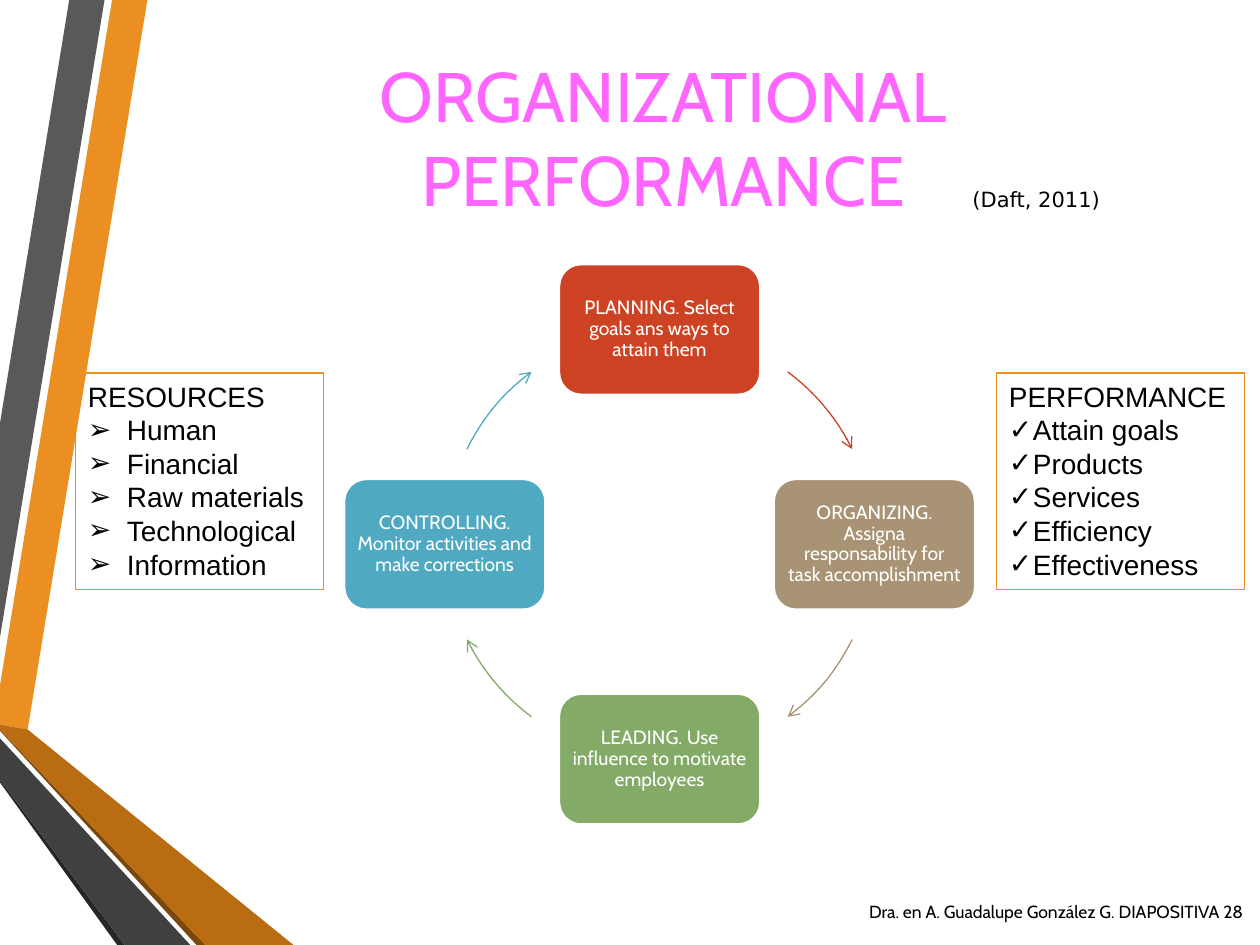
from dataclasses import dataclass
from math import cos, radians, sin

from lxml.etree import SubElement
from pptx import Presentation
from pptx.dml.color import RGBColor
from pptx.enum.shapes import MSO_SHAPE
from pptx.enum.text import MSO_ANCHOR, MSO_AUTO_SIZE, PP_ALIGN
from pptx.oxml.ns import qn
from pptx.util import Emu, Inches, Pt


@dataclass(frozen=True)
class Theme:
    face: str = "Cabin"
    list_face: str = "Arial"
    cite_face: str = "DejaVu Sans"
    ink: str = "000000"
    white: str = "FFFFFF"
    pink: str = "FF66FF"
    edge: str = "EB8F22"
    title: int = 40
    list: int = 16
    cite: int = 12
    step: int = 11
    foot: int = 10


@dataclass(frozen=True)
class Box:
    """Left, top, width and height in grid columns and rows."""
    x: float
    y: float
    w: float
    h: float


@dataclass(frozen=True)
class Band:
    color: str
    points: tuple


@dataclass(frozen=True)
class Step:
    text: str
    color: str


@dataclass(frozen=True)
class Panel:
    box: Box
    head: str
    items: tuple
    mark: str
    indent: float


THEME = Theme()
COLS, ROWS = 100, 75
WIDTH, HEIGHT = Inches(10), Inches(7.5)

# Side ribbon, from back to front
BANDS = (
    Band("EB8F22", ((0, 54.4), (0, 57.5), (2.2, 57.9), (11.7, 0), (8.9, 0))),
    Band("595959", ((8.3, 0), (5.5, 0), (0, 33.6), (0, 50.6))),
    Band("262626", ((0, 61.9), (0, 62.1), (9.3, 75), (9.9, 75))),
    Band("7B480B", ((0, 57.9), (0, 58), (15.6, 75), (16.3, 75))),
    Band("B96C11", ((0, 57.9), (16.3, 75), (23.3, 75), (2.2, 57.9), (0, 57.5))),
    Band("404040", ((0, 61.9), (9.9, 75), (15.1, 75), (0, 58.6))),
)

# Cycle, clockwise from the top
STEPS = (
    Step("PLANNING. Select goals ans ways to attain them", "CD4223"),
    Step("ORGANIZING. Assigna responsability for task accomplishment", "A89374"),
    Step("LEADING. Use influence to motivate employees", "83AA67"),
    Step("CONTROLLING. Monitor activities and make corrections", "4FA9C1"),
)
MID_X, MID_Y, RADIUS = 52.35, 43.2, 17.05
STEP_W, STEP_H = 15.9, 10.3
ARCS = ((306.6, 333.7), (26.3, 53.4), (126.6, 153.7), (206.3, 233.4))

PANELS = (
    Panel(Box(79.1, 29.6, 19.7, 17.2), "PERFORMANCE",
          ("Attain goals", "Products", "Services", "Efficiency",
           "Effectiveness"), "✓", 0.19),
    Panel(Box(6, 29.6, 19.7, 17.2), "RESOURCES",
          ("Human", "Financial", "Raw materials", "Technological",
           "Information"), "➢", 0.31),
)


def col(n: float) -> Emu:
    return Emu(round(WIDTH * n / COLS))


def row(n: float) -> Emu:
    return Emu(round(HEIGHT * n / ROWS))


def place(box: Box) -> tuple:
    return col(box.x), row(box.y), col(box.w), row(box.h)


def rgb(color: str) -> RGBColor:
    return RGBColor.from_string(color)


def paint(shape, fill: str | None, line: str | None, width: float = 0.75) -> None:
    shape.shadow.inherit = False
    if fill:
        shape.fill.solid()
        shape.fill.fore_color.rgb = rgb(fill)
    else:
        shape.fill.background()
    if line:
        shape.line.color.rgb = rgb(line)
        shape.line.width = Pt(width)
    else:
        shape.line.fill.background()


def style(frame, face: str, size: int, color: str, align=PP_ALIGN.LEFT) -> None:
    for par in frame.paragraphs:
        par.alignment = align
        for run in par.runs:
            run.font.name = face
            run.font.size = Pt(size)
            run.font.color.rgb = rgb(color)


def label(slide, box: Box, text: str, face: str, size: int, color: str,
          align=PP_ALIGN.LEFT, anchor=MSO_ANCHOR.MIDDLE, wrap: bool = True) -> None:
    frame = slide.shapes.add_textbox(*place(box)).text_frame
    frame.word_wrap = wrap
    frame.vertical_anchor = anchor
    frame.text = text
    style(frame, face, size, color, align)


def draw_band(slide, band: Band) -> None:
    first, *rest = [(col(x), row(y)) for x, y in band.points]
    pen = slide.shapes.build_freeform(*first)
    pen.add_line_segments(rest, close=True)
    paint(pen.convert_to_shape(), band.color, None)


def draw_step(slide, step: Step, angle: float) -> None:
    x = MID_X + RADIUS * cos(radians(angle)) - STEP_W / 2
    y = MID_Y + RADIUS * sin(radians(angle)) - STEP_H / 2
    shape = slide.shapes.add_shape(MSO_SHAPE.ROUNDED_RECTANGLE,
                                   *place(Box(x, y, STEP_W, STEP_H)))
    paint(shape, step.color, THEME.white, 0.85)
    frame = shape.text_frame
    frame.word_wrap = True
    frame.vertical_anchor = MSO_ANCHOR.MIDDLE
    frame.margin_left = frame.margin_right = Inches(0.05)
    frame.margin_top = frame.margin_bottom = Inches(0.05)
    frame.text = step.text
    frame.paragraphs[0].line_spacing = 0.9
    style(frame, THEME.face, THEME.step, THEME.white, PP_ALIGN.CENTER)


def draw_arc(slide, color: str, span: tuple) -> None:
    ring = Box(MID_X - RADIUS, MID_Y - RADIUS, 2 * RADIUS, 2 * RADIUS)
    arc = slide.shapes.add_shape(MSO_SHAPE.ARC, *place(ring))
    for i, angle in enumerate(span):
        arc.adjustments[i] = angle * 0.6  # 60000ths of a degree / 100000
    paint(arc, None, color)
    SubElement(arc.line._get_or_add_ln(), qn("a:tailEnd"), type="arrow")


def draw_panel(slide, panel: Panel) -> None:
    shape = slide.shapes.add_shape(MSO_SHAPE.RECTANGLE, *place(panel.box))
    paint(shape, None, THEME.edge)
    frame = shape.text_frame
    frame.word_wrap = True
    frame.auto_size = MSO_AUTO_SIZE.SHAPE_TO_FIT_TEXT
    frame.vertical_anchor = MSO_ANCHOR.TOP
    frame.text = "\n".join((panel.head, *panel.items))
    style(frame, THEME.list_face, THEME.list, THEME.ink)
    for par in frame.paragraphs[1:]:
        props = par._p.get_or_add_pPr()
        props.set("marL", str(Inches(panel.indent)))
        props.set("indent", str(-Inches(panel.indent)))
        SubElement(props, qn("a:buFont"), typeface=THEME.list_face)
        SubElement(props, qn("a:buChar"), char=panel.mark)


def main() -> None:
    deck = Presentation()
    deck.slide_width, deck.slide_height = WIDTH, HEIGHT
    slide = deck.slides.add_slide(deck.slide_layouts[6])

    for band in BANDS:
        draw_band(slide, band)
    for i, (step, span) in enumerate(zip(STEPS, ARCS)):
        draw_step(slide, step, 90 * i - 90)
        draw_arc(slide, step.color, span)
    for panel in PANELS:
        draw_panel(slide, panel)

    # Title, footer and citation
    label(slide, Box(10.5, 0, 84.3, 21.7), "ORGANIZATIONAL PERFORMANCE",
          THEME.face, THEME.title, THEME.pink, PP_ALIGN.CENTER)
    label(slide, Box(68, 69.7, 31.7, 5.2),
          "Dra. en A. Guadalupe González G. DIAPOSITIVA 28",
          THEME.face, THEME.foot, THEME.ink)
    label(slide, Box(76.2, 14.3, 12.6, 3), "(Daft, 2011)", THEME.cite_face,
          THEME.cite, THEME.ink, anchor=MSO_ANCHOR.TOP, wrap=False)
    deck.save("out.pptx")


if __name__ == "__main__":
    main()
